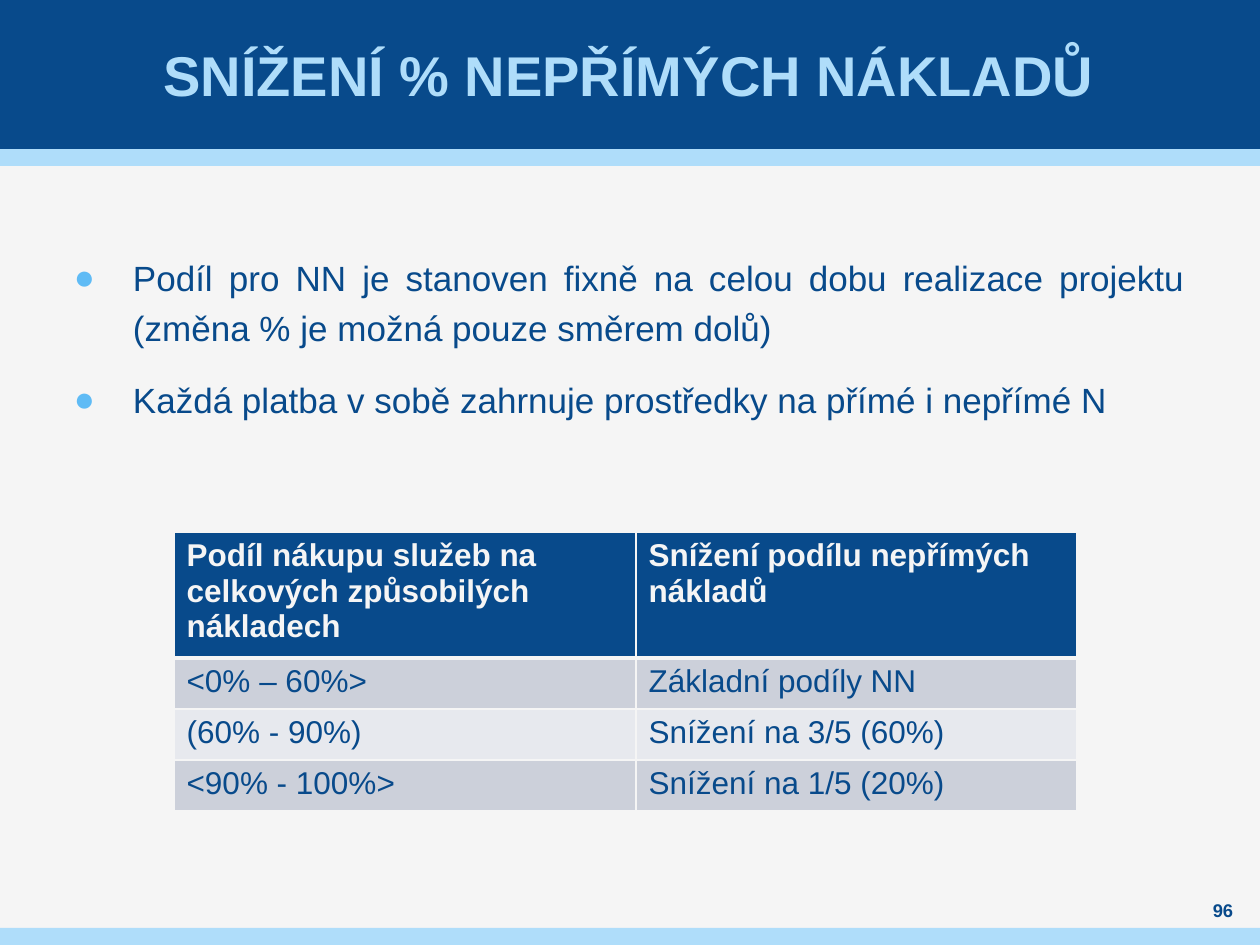
from dataclasses import dataclass

from lxml.etree import SubElement
from pptx import Presentation
from pptx.dml.color import RGBColor
from pptx.enum.shapes import MSO_SHAPE
from pptx.enum.text import MSO_ANCHOR, PP_ALIGN
from pptx.oxml.ns import qn
from pptx.util import Emu, Pt


@dataclass(frozen=True)
class Theme:
    """Colours, font and type sizes of the slide."""

    paper: str = "F5F5F5"
    navy: str = "084A8B"
    sky: str = "AFDDFA"
    bullet: str = "5FBBF5"
    band_dark: str = "CCD0DA"
    band_light: str = "E7E9EE"
    font: str = "Arial"
    title_size: float = 32
    body_size: float = 20
    table_size: float = 18
    number_size: float = 10.5


THEME = Theme()
WIDTH, HEIGHT = 1260, 945
HEADER_HEIGHT, STRIPE_HEIGHT = 149, 17
BULLETS = [
    "Podíl pro NN je stanoven fixně na celou dobu realizace projektu (změna % je možná pouze směrem dolů)",
    "Každá platba v sobě zahrnuje prostředky na přímé i nepřímé N",
]
TABLE_ROWS = [
    ["Podíl nákupu služeb na celkových způsobilých nákladech", "Snížení podílu nepřímých nákladů"],
    ["<0% – 60%>", "Základní podíly NN"],
    ["(60% - 90%)", "Snížení na 3/5 (60%)"],
    ["<90% - 100%>", "Snížení na 1/5 (20%)"],
]
COLUMN_WIDTHS = [462, 441]
ROW_HEIGHTS = [117, 51, 51, 51]


def px(length):
    """Turn pixels into EMU."""
    return Emu(round(length * 914400 / 126))


def paint(fill, color):
    """Give a fill one solid colour."""
    fill.solid()
    fill.fore_color.rgb = RGBColor.from_string(color)


def style(paragraph, size, color, bold=False):
    """Set the font of a paragraph."""
    font = paragraph.font
    font.name, font.size, font.bold = THEME.font, Pt(size), bold
    font.color.rgb = RGBColor.from_string(color)


def add_band(page, top, height, color):
    """Add a bar across the full slide width."""
    band = page.shapes.add_shape(MSO_SHAPE.RECTANGLE, 0, px(top), px(WIDTH), px(height))
    band.shadow.inherit = False
    paint(band.fill, color)
    band.line.fill.background()


def add_frame(page, left, top, width, height, anchor=MSO_ANCHOR.MIDDLE):
    """Add a wrapping text box without insets and return its frame."""
    frame = page.shapes.add_textbox(px(left), px(top), px(width), px(height)).text_frame
    frame.word_wrap = True
    frame.vertical_anchor = anchor
    frame.margin_left = frame.margin_right = frame.margin_top = frame.margin_bottom = 0
    return frame


def add_label(page, text, bounds, size, color):
    """Add one bold centred line of text."""
    paragraph = add_frame(page, *bounds).paragraphs[0]
    paragraph.text = text
    paragraph.alignment = PP_ALIGN.CENTER
    style(paragraph, size, color, bold=True)


def set_bullet(paragraph, indent):
    """Give a paragraph a coloured round bullet with a hanging indent."""
    properties = paragraph._p.get_or_add_pPr()
    properties.set("marL", str(px(indent)))
    properties.set("indent", str(-px(indent)))
    color = SubElement(properties, qn("a:buClr"))
    SubElement(color, qn("a:srgbClr"), val=THEME.bullet)
    SubElement(properties, qn("a:buFont"), typeface=THEME.font)
    SubElement(properties, qn("a:buChar"), char="●")


def add_bullets(page, texts, bounds):
    """Add a justified bulleted list."""
    frame = add_frame(page, *bounds, anchor=MSO_ANCHOR.TOP)
    for index, text in enumerate(texts):
        paragraph = frame.add_paragraph() if index else frame.paragraphs[0]
        paragraph.text = text
        paragraph.alignment = PP_ALIGN.JUSTIFY
        paragraph.line_spacing = Pt(28.8)
        paragraph.space_before = paragraph.space_after = Pt(6)
        set_bullet(paragraph, 59)
        style(paragraph, THEME.body_size, THEME.navy)


def set_borders(cell, widths):
    """Draw the cell borders with the given point width per side."""
    properties = cell._tc.get_or_add_tcPr()
    for side, width in widths.items():
        line = SubElement(properties, qn(f"a:ln{side}"), w=str(Pt(width)))
        fill = SubElement(line, qn("a:solidFill"))
        SubElement(fill, qn("a:srgbClr"), val=THEME.paper)


def add_grid(page, rows, left, top):
    """Add the table with a dark header and banded rows."""
    table = page.shapes.add_table(
        len(rows), len(COLUMN_WIDTHS), px(left), px(top), px(sum(COLUMN_WIDTHS)), px(sum(ROW_HEIGHTS))
    ).table
    for column, width in zip(table.columns, COLUMN_WIDTHS):
        column.width = px(width)
    for row, height in zip(table.rows, ROW_HEIGHTS):
        row.height = px(height)
    for row_index, texts in enumerate(rows):
        header = row_index == 0
        band = THEME.band_dark if row_index % 2 else THEME.band_light
        for column_index, text in enumerate(texts):
            cell = table.cell(row_index, column_index)
            cell.text = text
            set_borders(cell, {"L": 1, "R": 1, "T": 3 if row_index == 1 else 1, "B": 3 if header else 1})
            paint(cell.fill, THEME.navy if header else band)
            color = THEME.paper if header else THEME.navy
            style(cell.text_frame.paragraphs[0], THEME.table_size, color, bold=header)


def main():
    """Build and save the slide."""
    deck = Presentation()
    deck.slide_width, deck.slide_height = px(WIDTH), px(HEIGHT)
    page = deck.slides.add_slide(deck.slide_layouts[6])
    paint(page.background.fill, THEME.paper)
    add_band(page, HEADER_HEIGHT, STRIPE_HEIGHT, THEME.sky)
    add_band(page, 0, HEADER_HEIGHT, THEME.navy)
    add_band(page, HEIGHT - STRIPE_HEIGHT, STRIPE_HEIGHT, THEME.sky)
    add_label(page, "SNÍŽENÍ % NEPŘÍMÝCH NÁKLADŮ", (49, 0, 1160, HEADER_HEIGHT), THEME.title_size, THEME.sky)
    add_bullets(page, BULLETS, (74, 248, 1111, 651))
    add_label(page, "96", (1191, 898, 64, 25), THEME.number_size, THEME.navy)
    add_grid(page, TABLE_ROWS, 174, 532)
    deck.save("out.pptx")


if __name__ == "__main__":
    main()
